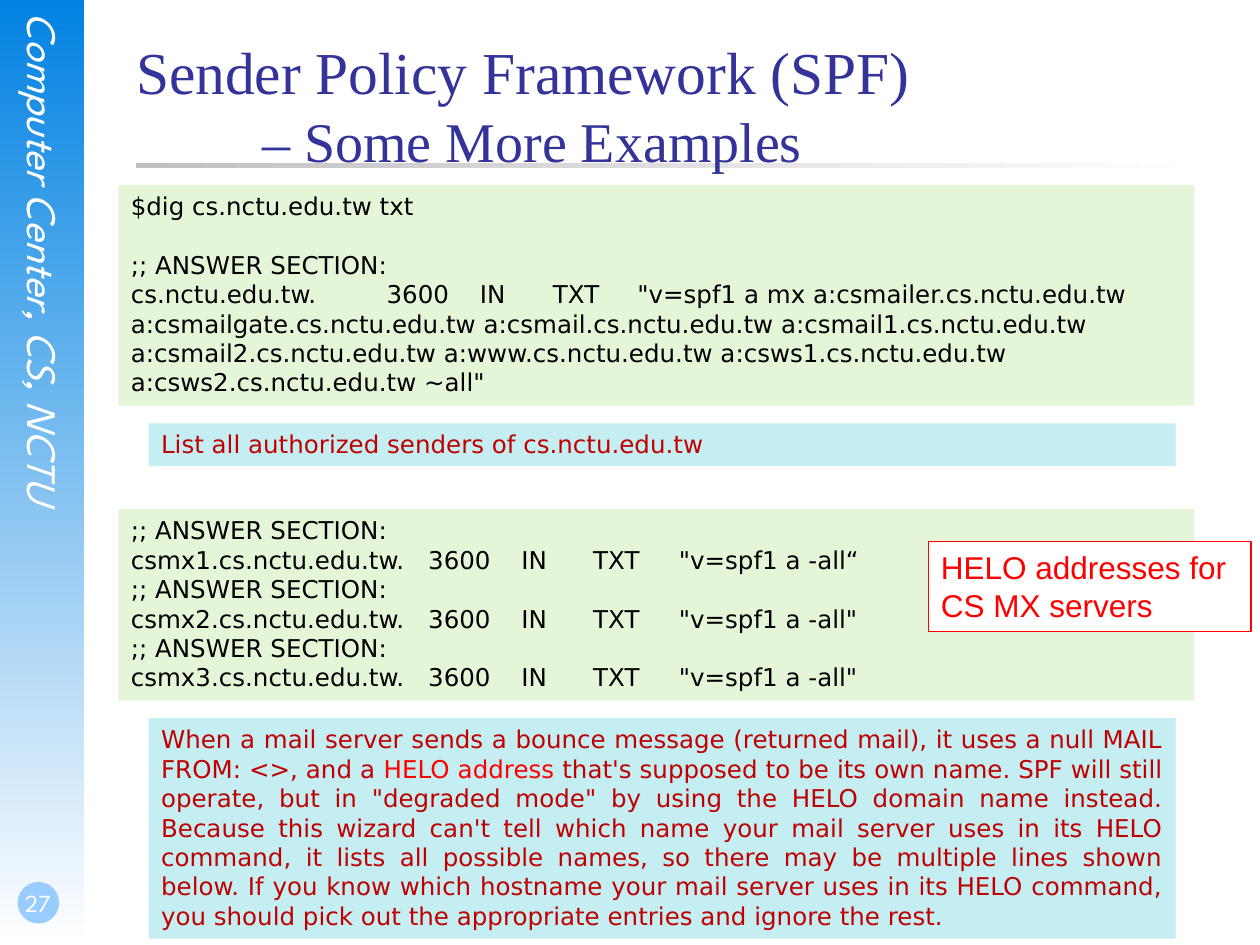
import pptx
import pptx.dml.color
import pptx.enum.shapes
import pptx.enum.text
import pptx.oxml
import pptx.oxml.ns
import pptx.util

# Grid: 100 columns by 75 rows on a 10 by 7.5 inch page
COLUMNS, ROWS = 100, 75
WIDTH, HEIGHT = pptx.util.Inches(10), pptx.util.Inches(7.5)

COLORS = {
    "sky": "0282E2",
    "white": "FFFFFF",
    "badge": "99CCFF",
    "silver": "C0C0C0",
    "title": "333399",
    "code": "E5F6D8",
    "note": "C4EEF2",
    "black": "000000",
    "crimson": "C00000",
    "red": "FF0000",
}
SIDE_FONT, TITLE_FONT = "League Spartan", "Times New Roman"
BODY_FONT, LABEL_FONT = "DejaVu Sans", "Arial"
INSET = (0.1, 0.05, 0.1, 0.05)
NO_INSET = (0, 0, 0, 0)

CODE_LEFT, CODE_WIDTH = 9.4, 85.4
NOTE_LEFT, NOTE_WIDTH = 11.8, 81.5
DOMAIN = "cs.nctu.edu.tw"
SENDERS = ["csmailer", "csmailgate", "csmail", "csmail1", "csmail2",
           "www", "csws1", "csws2"]


def color(name):
    return pptx.dml.color.RGBColor.from_string(COLORS[name])


def area(left, top, width, height):
    """Turn grid columns and rows into slide lengths."""
    across, down = WIDTH / COLUMNS, HEIGHT / ROWS
    return (int(left * across), int(top * down),
            int(width * across), int(height * down))


def add_panel(page, place, fill, shape="RECTANGLE", line=None):
    kind = getattr(pptx.enum.shapes.MSO_SHAPE, shape)
    panel = page.shapes.add_shape(kind, *area(*place))
    panel.shadow.inherit = False
    panel.fill.solid()
    panel.fill.fore_color.rgb = color(fill)
    if line:
        panel.line.color.rgb = color(line)
        panel.line.width = pptx.util.Pt(0.75)
    else:
        panel.line.fill.background()
    return panel


def add_fade(page, place, start, angle):
    panel = add_panel(page, place, start)
    panel.fill.gradient()
    panel.fill.gradient_angle = angle
    for stop, name in zip(panel.fill.gradient_stops, (start, "white")):
        stop.color.rgb = color(name)


def add_text_box(page, place):
    return page.shapes.add_textbox(*area(*place))


def prepare_frame(box, inset, anchor="TOP"):
    frame = box.text_frame
    frame.word_wrap = True
    frame.vertical_anchor = getattr(pptx.enum.text.MSO_ANCHOR, anchor)
    (frame.margin_left, frame.margin_top,
     frame.margin_right, frame.margin_bottom) = map(pptx.util.Inches, inset)
    return frame


def set_tabs(para, stops):
    """Set left tab stops, in inches from the text edge."""
    tab_list = pptx.oxml.ns.qn("a:tabLst")
    tabs = para._p.get_or_add_pPr().makeelement(tab_list, {})
    for stop in stops:
        tab = tabs.makeelement(pptx.oxml.ns.qn("a:tab"), {
            "pos": str(pptx.util.Inches(stop)), "algn": "l"})
        tabs.append(tab)
    para._p.get_or_add_pPr().append(tabs)


def style(para, size, font, ink, align="LEFT"):
    para.alignment = getattr(pptx.enum.text.PP_ALIGN, align)
    para.font.size = pptx.util.Pt(size)
    para.font.name = font
    para.font.color.rgb = color(ink)


def write(frame, lines, size, font, ink, align="LEFT", tabs=()):
    """Write one paragraph for each line."""
    for index, line in enumerate(lines):
        para = frame.add_paragraph() if index else frame.paragraphs[0]
        para.text = line
        if "\t" in line:
            set_tabs(para, tabs)
        style(para, size, font, ink, align)
    return frame.paragraphs


def add_code(page, top, height, lines, tabs):
    panel = add_panel(page, (CODE_LEFT, top, CODE_WIDTH, height), "code")
    frame = prepare_frame(panel, INSET)
    return write(frame, lines, 14, BODY_FONT, "black", tabs=tabs)


def add_note(page, top, height, pieces, align="LEFT"):
    """Add a note made of (text, colour) pieces in one paragraph."""
    panel = add_panel(page, (NOTE_LEFT, top, NOTE_WIDTH, height), "note")
    para = prepare_frame(panel, INSET).paragraphs[0]
    style(para, 14, BODY_FONT, "crimson", align)
    for text, ink in pieces:
        span = para.add_run()
        span.text = text
        if ink != "crimson":
            span.font.color.rgb = color(ink)


def add_sidebar(page):
    add_fade(page, (0, 0, 6.7, 75), "sky", 270)
    box = add_text_box(page, (1.5, 1, 4, 51.1))
    frame = prepare_frame(box, NO_INSET)
    box.element.find(".//" + pptx.oxml.ns.qn("a:bodyPr")).set("vert", "eaVert")
    para, = write(frame, ["Computer Center, CS, NCTU"], 24, SIDE_FONT, "white")
    para.font.italic = True

    # Page number
    add_panel(page, (1.4, 70, 3.3, 3.3), "badge", "OVAL")
    box = add_text_box(page, (0, 68.3, 5.8, 5))
    frame = prepare_frame(box, (0.02, 0, 0, 0.05), "BOTTOM")
    write(frame, ["27"], 14, SIDE_FONT, "white", "CENTER")


def add_title(page):
    add_fade(page, (10.8, 12.9, 85, 0.4), "silver", 0)
    box = add_text_box(page, (10.8, 2.8, 85, 12.5))
    para = prepare_frame(box, NO_INSET).paragraphs[0]
    set_tabs(para, [1])
    style(para, 34, TITLE_FONT, "title")
    para.add_run().text = "Sender Policy Framework (SPF)"
    para.add_line_break()
    span = para.add_run()
    span.text = "\t– Some More Examples"
    span.font.size = pptx.util.Pt(32)


def main():
    deck = pptx.Presentation()
    deck.slide_width, deck.slide_height = WIDTH, HEIGHT
    page = deck.slides.add_slide(deck.slide_layouts[6])

    add_sidebar(page)
    add_title(page)

    # Query for the domain, with a one-line gap after the command
    hosts = " ".join(f"a:{name}.{DOMAIN}" for name in SENDERS)
    heading = ";; ANSWER SECTION:"
    answer = f'{DOMAIN}.\t3600\tIN\tTXT\t"v=spf1 a mx {hosts} ~all"'
    paras = add_code(page, 14.7, 17.5,
                     [f"$dig {DOMAIN} txt", heading, answer],
                     [2.03, 2.77, 3.35, 4.02])
    paras[1].space_before = pptx.util.Pt(16.5)

    # Answers for the mail exchangers
    lines = []
    for number, quote in enumerate('“""', start=1):
        lines += [heading, f"csmx{number}.{DOMAIN}.\t3600\tIN\tTXT\t"
                           f'"v=spf1 a -all{quote}']
    add_code(page, 40.4, 15.2, lines, [2.36, 3.1, 3.67, 4.35])

    # Explanations
    add_note(page, 33.6, 3.4,
             [(f"List all authorized senders of {DOMAIN}", "crimson")])
    add_note(page, 57, 17.5, [
        ("When a mail server sends a bounce message (returned mail), it uses "
         "a null MAIL FROM: <>, and a ", "crimson"),
        ("HELO address", "red"),
        (" that's supposed to be its own name. SPF will still operate, but in "
         '"degraded mode" by using the HELO domain name instead. Because this '
         "wizard can't tell which name your mail server uses in its HELO "
         "command, it lists all possible names, so there may be multiple lines "
         "shown below. If you know which hostname your mail server uses in its "
         "HELO command, you should pick out the appropriate entries and ignore "
         "the rest.", "crimson"),
    ], "JUSTIFY")

    # Callout
    callout = add_panel(page, (73.7, 43, 25.6, 7.1), "white", line="red")
    write(prepare_frame(callout, INSET),
          ["HELO addresses for \vCS MX servers"], 18, LABEL_FONT, "red")

    deck.save("out.pptx")


if __name__ == "__main__":
    main()
